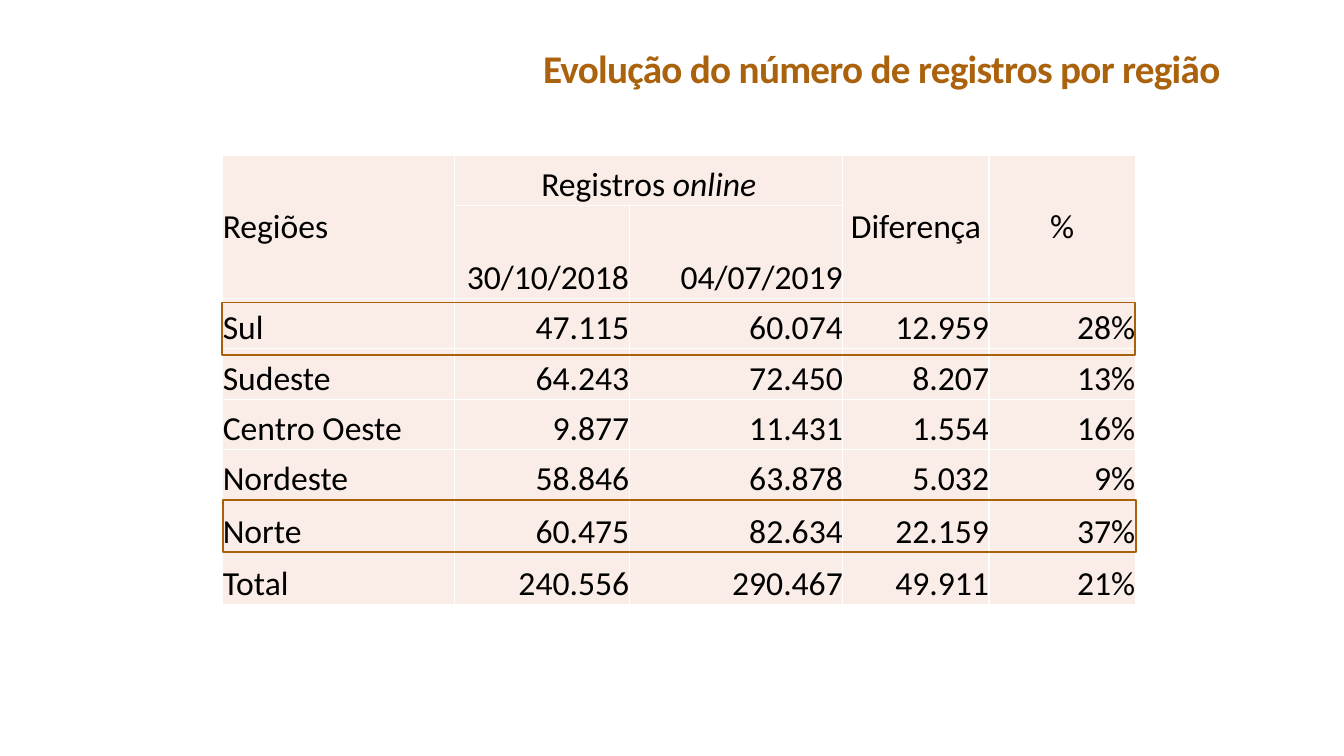
from lxml import etree
from pptx import Presentation
from pptx.dml.color import RGBColor
from pptx.enum.shapes import MSO_SHAPE
from pptx.enum.text import MSO_ANCHOR, PP_ALIGN
from pptx.oxml.ns import qn
from pptx.util import Inches, Pt

LEFT, CENTER, RIGHT = PP_ALIGN.LEFT, PP_ALIGN.CENTER, PP_ALIGN.RIGHT
MIDDLE, BOTTOM = MSO_ANCHOR.MIDDLE, MSO_ANCHOR.BOTTOM
RECTANGLE = MSO_SHAPE.RECTANGLE

COLORS = {"title": "AB620D", "frame": "A9610D", "cell": "FAEDE7",
          "border": "FFFFFF", "text": "000000"}
FONT = "Calibri"
TITLE_FORMAT = {"name": FONT, "size": Pt(28), "bold": True}
CELL_FORMAT = {"name": FONT, "size": Pt(24), "bold": False}

TITLE_BOX = (1.2, 0.31, 11, 0.65)
TABLE_BOX = (2.21, 1.54, 9.06, 4.46)
COLUMN_WIDTHS = [2.3, 1.73, 2.12, 1.45, 1.45]
ROW_HEIGHTS = [0.5, 0.92, 0.5, 0.5, 0.5, 0.5, 0.52, 0.52]
ROWS = [
    ["Regiões", "Registros online", "", "Diferença", "%"],
    ["", "30/10/2018", "04/07/2019", "", ""],
    ["Sul", "47.115", "60.074", "12.959", "28%"],
    ["Sudeste", "64.243", "72.450", "8.207", "13%"],
    ["Centro Oeste", "9.877", "11.431", "1.554", "16%"],
    ["Nordeste", "58.846", "63.878", "5.032", "9%"],
    ["Norte", "60.475", "82.634", "22.159", "37%"],
    ["Total", "240.556", "290.467", "49.911", "21%"],
]
MERGES = [((0, 0), (1, 0)), ((0, 1), (0, 2)), ((0, 3), (1, 3)), ((0, 4), (1, 4))]
ITALIC_WORDS = {"online"}
FRAME_HEIGHT = 0.52
# Framed row and the small shift (right, down) of its frame
FRAMED_ROWS = {6: (0, 0), 2: (-0.01, 0.04)}


def color(name):
    return RGBColor.from_string(COLORS[name])


def add_run(paragraph, text, formats, color_name, italic=False):
    run = paragraph.add_run()
    run.text = text
    for attribute, value in formats.items():
        setattr(run.font, attribute, value)
    run.font.italic = italic
    run.font.color.rgb = color(color_name)
    return run


def add_title(slide, box, text):
    frame = slide.shapes.add_textbox(*map(Inches, box)).text_frame
    frame.word_wrap = True
    frame.vertical_anchor = BOTTOM
    paragraph = frame.paragraphs[0]
    paragraph.alignment = RIGHT
    paragraph.line_spacing = 0.85
    run = add_run(paragraph, text, TITLE_FORMAT, "title")
    run.font._element.set("spc", "-50")


def add_borders(cell):
    properties = cell._tc.get_or_add_tcPr()
    for position, side in enumerate(("lnL", "lnR", "lnT", "lnB")):
        line = etree.Element(qn(f"a:{side}"), w=str(Pt(1)))
        fill = etree.SubElement(line, qn("a:solidFill"))
        etree.SubElement(fill, qn("a:srgbClr"), val=COLORS["border"])
        properties.insert(position, line)


def fill_cell(cell, text, alignment, anchor):
    cell.margin_left = cell.margin_right = cell.margin_top = cell.margin_bottom = 0
    cell.vertical_anchor = anchor
    cell.fill.solid()
    cell.fill.fore_color.rgb = color("cell")
    add_borders(cell)
    paragraph = cell.text_frame.paragraphs[0]
    paragraph.alignment = alignment
    # A closing foreign word is set in italics
    start, space, last = text.rpartition(" ")
    if last in ITALIC_WORDS:
        add_run(paragraph, start + space, CELL_FORMAT, "text")
        add_run(paragraph, last, CELL_FORMAT, "text", italic=True)
    elif text:
        add_run(paragraph, text, CELL_FORMAT, "text")


def add_region_table(slide, box):
    table = slide.shapes.add_table(
        len(ROWS), len(COLUMN_WIDTHS), *map(Inches, box)).table
    table.first_row = table.horz_banding = False
    for column, width in zip(table.columns, COLUMN_WIDTHS):
        column.width = Inches(width)
    for row, height in zip(table.rows, ROW_HEIGHTS):
        row.height = Inches(height)
    for first, last in MERGES:
        table.cell(*first).merge(table.cell(*last))
    for row_index, row in enumerate(ROWS):
        for column_index, text in enumerate(row):
            cell = table.cell(row_index, column_index)
            alignment = (LEFT if column_index == 0
                         else CENTER if row_index == 0 else RIGHT)
            tall = cell.is_merge_origin and cell.span_height > 1
            fill_cell(cell, text, alignment, MIDDLE if tall else BOTTOM)


def add_row_frames(slide, box):
    left, top, width, _ = box
    for row_index, (right, down) in FRAMED_ROWS.items():
        row_top = top + sum(ROW_HEIGHTS[:row_index])
        shape = slide.shapes.add_shape(
            RECTANGLE, Inches(left + right), Inches(row_top + down),
            Inches(width), Inches(FRAME_HEIGHT))
        shape.shadow.inherit = False
        shape.fill.background()
        shape.line.color.rgb = color("frame")
        shape.line.width = Pt(1.25)


def main():
    presentation = Presentation()
    presentation.slide_width = Inches(13.33)
    presentation.slide_height = Inches(7.5)
    slide = presentation.slides.add_slide(presentation.slide_layouts[6])
    # Heading
    add_title(slide, TITLE_BOX, "Evolução do número de registros por região")
    # Table with the two highlighted regions
    add_region_table(slide, TABLE_BOX)
    add_row_frames(slide, TABLE_BOX)
    presentation.save("out.pptx")


if __name__ == "__main__":
    main()
